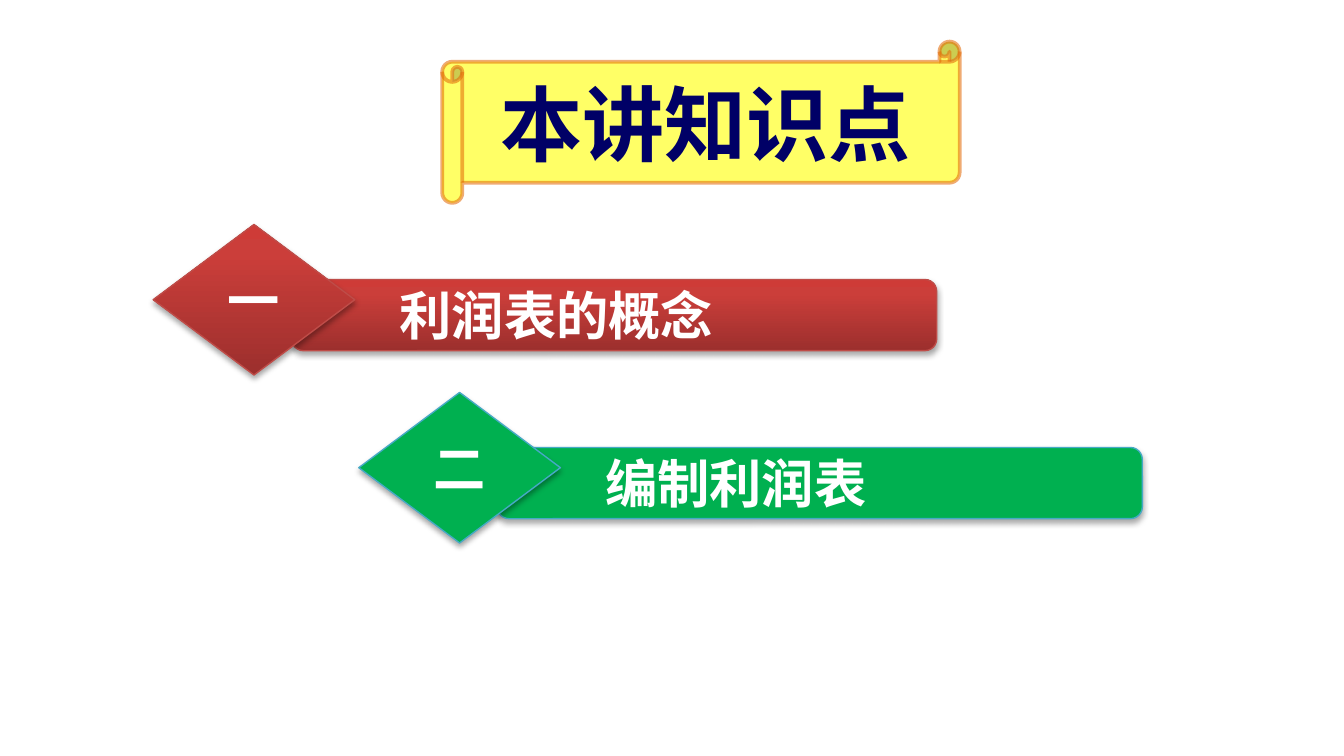
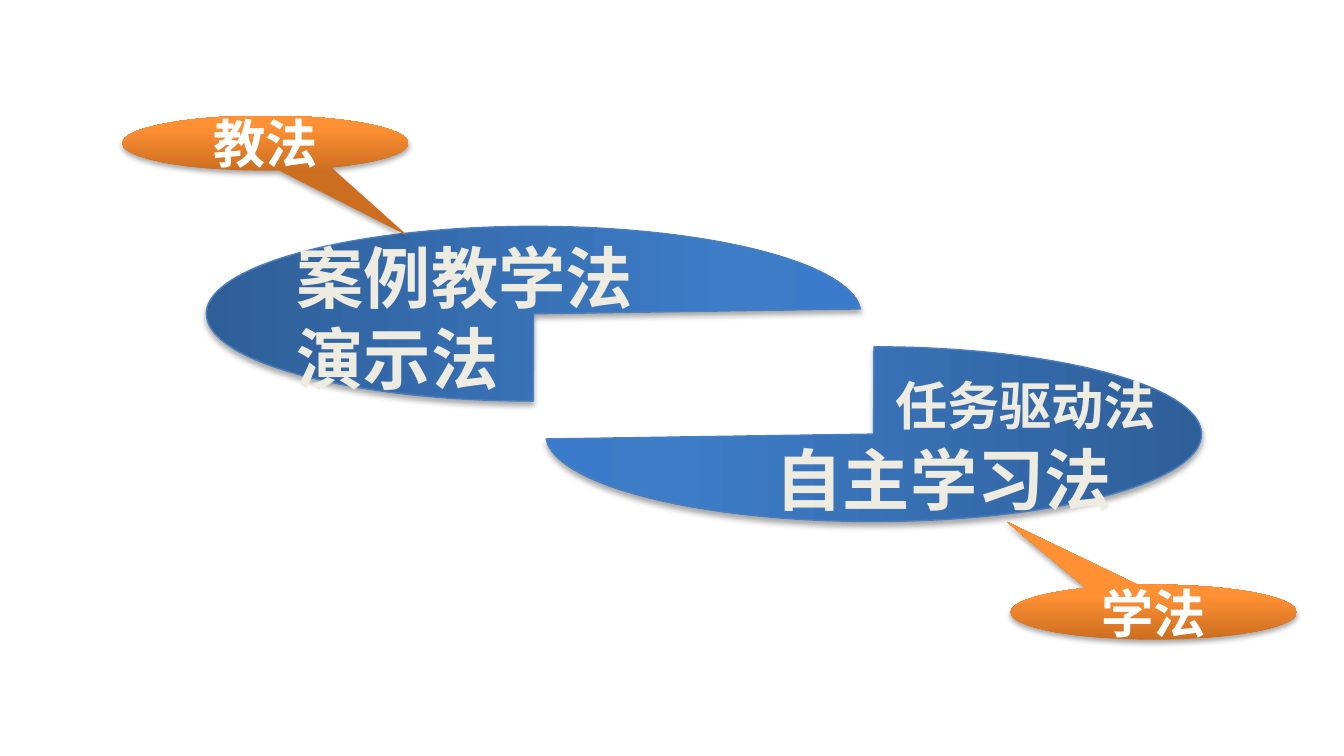
"""Builds two lesson slides: the topics covered and the teaching methods."""
from lxml.etree import SubElement
from pptx import Presentation
from pptx.dml.color import RGBColor
from pptx.enum.shapes import MSO_SHAPE as Kind
from pptx.enum.text import MSO_ANCHOR as Anchor, PP_ALIGN as Align
from pptx.oxml.ns import qn
from pptx.util import Inches, Pt

WHITE = RGBColor(0xFF, 0xFF, 0xFF)
CREAM = RGBColor(0xEE, 0xEC, 0xE1)
NAVY = RGBColor(0x00, 0x00, 0x66)
YELLOW = RGBColor(0xFF, 0xFF, 0x66)
SCROLL_EDGE = RGBColor(0xE4, 0x6C, 0x0A)
GREEN = RGBColor(0x00, 0xB0, 0x50)
TEAL = RGBColor(0x46, 0xAA, 0xC5)
RED_EDGE = RGBColor(0xBF, 0x4C, 0x48)
BLUE_EDGE = RGBColor(0x4B, 0x7E, 0xBC)
REDS = [RGBColor.from_string(code) for code in ("9C2F2D", "CB3E3A", "CE3B37")]
BLUES = [RGBColor.from_string(code) for code in ("2F5F99", "3D7CC7", "3A7CCB")]
ORANGES = [RGBColor.from_string(code) for code in ("CC6E20", "FF9034", "FF9136")]
STOPS = (0, 80, 100)
LATIN, HAN = "Calibri", "Noto Sans CJK SC"

TITLE = "本讲知识点"
TOPICS = [
    ("一", "利润表的概念", 1.14, 1.67, REDS, RED_EDGE),
    ("二", "编制利润表", 2.67, 2.92, GREEN, TEAL),
]
METHODS = [
    ((3.32, -0.1, 1.3, 4.87), 90, [
        (["案例教学法", "演示法"], (2.11, 1.71, 4.47, 1.92), 36, Align.LEFT),
    ]),
    ((5.85, 0.79, 1.3, 4.88), 270, [
        (["自主学习法"], (3.9, 3.21, 4.47, 0.71), 36, Align.RIGHT),
        (["任务驱动法"], (4.84, 2.73, 3.86, 0.57), 28, Align.RIGHT),
    ]),
]
CALLOUTS = [
    ("教法", 0.91, 0.86, (0.497, 1.683)),
    ("学法", 7.52, 4.35, (-0.514, -1.643)),
]


def write(box, lines, size, color, font=LATIN, align=Align.CENTER, indent=0):
    frame = box.text_frame
    frame.word_wrap = True
    frame.text = "\n".join(lines)
    for para in frame.paragraphs:
        para.alignment = align
        if indent:
            para._p.get_or_add_pPr().set("indent", str(Inches(indent)))
        para.font.name = font
        para.font.size = Pt(size)
        para.font.bold = True
        para.font.color.rgb = color


def paint(shape, fill):
    """Fill with one colour, or with a list of colours running upwards."""
    if isinstance(fill, RGBColor):
        shape.fill.solid()
        shape.fill.fore_color.rgb = fill
        return
    shape.fill.gradient()
    shape.fill.gradient_angle = 90
    stops = next(shape._element.spPr.iter(qn("a:gsLst")))
    stops.clear()
    for position, color in zip(STOPS, fill):
        stop = SubElement(stops, qn("a:gs"), pos=str(position * 1000))
        SubElement(stop, qn("a:srgbClr"), val=str(color))


def add_shape(parent, kind, place, fill, edge=None, width=0.75, shadow=True):
    shape = parent.shapes.add_shape(kind, *map(Inches, place))
    paint(shape, fill)
    if edge is None:
        shape.line.fill.background()
    else:
        shape.line.color.rgb = edge
        shape.line.width = Pt(width)
    shape.shadow.inherit = False
    if shadow:
        effects = shape._element.spPr.find(qn("a:effectLst"))
        outer = SubElement(effects, qn("a:outerShdw"), blurRad=str(Pt(3.1)),
                           dist=str(Pt(1.8)), dir="5400000", rotWithShape="0")
        black = SubElement(outer, qn("a:srgbClr"), val="000000")
        SubElement(black, qn("a:alpha"), val="35000")
    shape.text_frame.vertical_anchor = Anchor.MIDDLE
    return shape


def build_topics(page):
    scroll = add_shape(page, Kind.HORIZONTAL_SCROLL, (3.29, 0.31, 3.85, 1.2),
                       YELLOW, SCROLL_EDGE, 2, shadow=False)
    edge_color = next(scroll.line._ln.iter(qn("a:srgbClr")))
    SubElement(edge_color, qn("a:alpha"), val="57000")
    write(scroll, [TITLE], 44, NAVY, HAN)
    for number, topic, left, top, fill, edge in TOPICS:
        group = page.shapes.add_group_shape()
        bar = add_shape(group, Kind.ROUNDED_RECTANGLE,
                        (left + 1.03, top + 0.41, 4.8, 0.53), fill, edge)
        write(bar, [topic], 28, WHITE, align=Align.LEFT, indent=0.68)
        diamond = add_shape(group, Kind.DIAMOND, (left, top, 1.5, 1.12), fill, edge)
        write(diamond, [number], 28, WHITE, HAN)


def build_methods(page):
    for place, turn, labels in METHODS:
        group = page.shapes.add_group_shape()
        pie = add_shape(group, Kind.PIE, place, BLUES, BLUE_EDGE)
        pie.rotation = turn
        pie.adjustments[0], pie.adjustments[1] = 0.186, 161.488
        for lines, label_place, size, align in labels:
            box = group.shapes.add_textbox(*map(Inches, label_place))
            write(box, lines, size, CREAM, align=align)
    for name, left, top, tip in CALLOUTS:
        callout = add_shape(page, Kind.OVAL_CALLOUT, (left, top, 2.13, 0.41), ORANGES)
        callout.adjustments[0], callout.adjustments[1] = tip
        write(callout, [name], 28, WHITE)


def main():
    deck = Presentation()
    deck.slide_width = Inches(10)
    deck.slide_height = deck.slide_width * 9 // 16
    for build in (build_topics, build_methods):
        build(deck.slides.add_slide(deck.slide_layouts[6]))
    deck.save("out.pptx")


if __name__ == "__main__":
    main()
